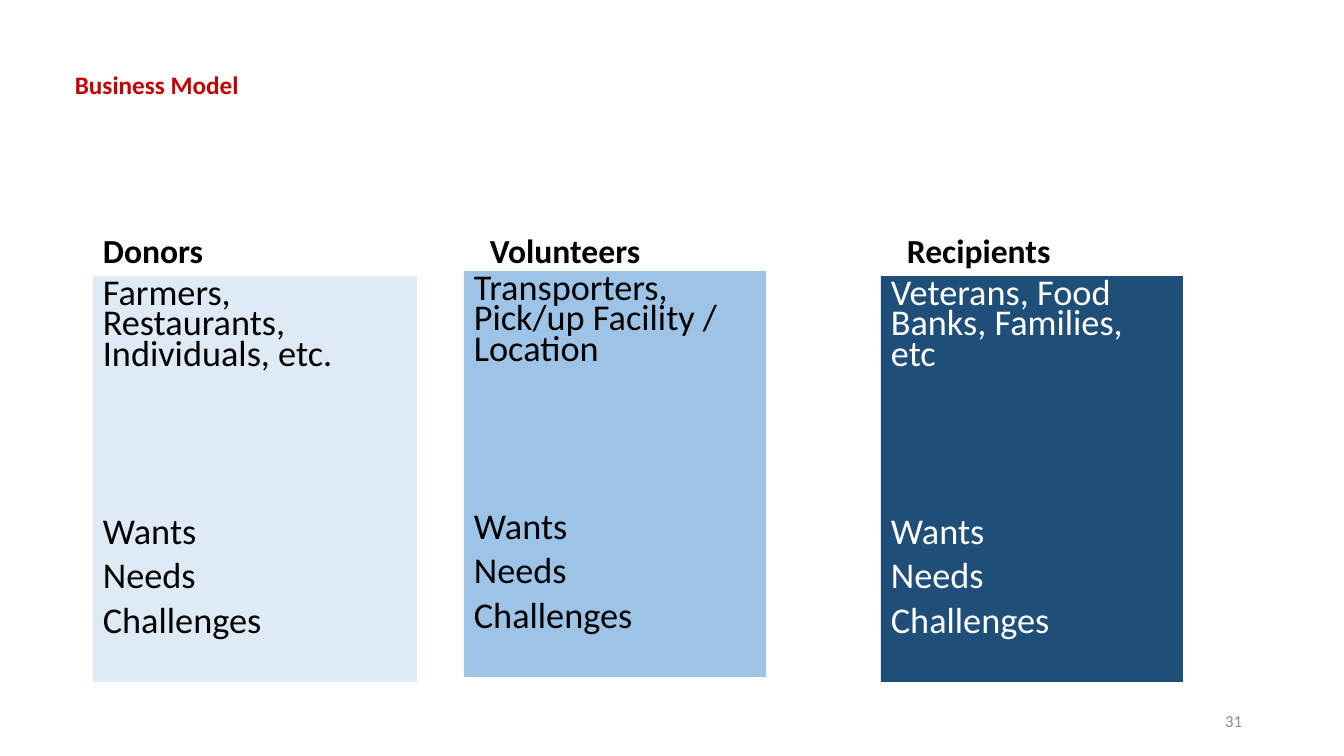
"""Build the Business Model slide with donor, volunteer and recipient columns."""
from pptx import Presentation
from pptx import util as u
from pptx.dml.color import RGBColor
from pptx.enum import shapes, text

PX = 914400 / 100.8
COLORS = {
    "black": "000000", "white": "FFFFFF", "red": "C00000", "gray": "8C8C8C",
    "pale": "DEEBF7", "sky": "9DC3E6", "navy": "1F4E79",
}


def add_text(box, lines, fill=None, size=24, color="black", bold=False,
             anchor=text.MSO_ANCHOR.TOP, align=text.PP_ALIGN.LEFT,
             spacing=1.0, before=0, gap=None):
    sp = s.shapes.add_shape(shapes.MSO_SHAPE.RECTANGLE, *[round(v * PX) for v in box]) \
        if fill else s.shapes.add_textbox(*[round(v * PX) for v in box])
    if fill:
        sp.shadow.inherit = False
        sp.fill.solid()
        sp.fill.fore_color.rgb = RGBColor.from_string(COLORS[fill])
        sp.line.fill.background()
    tf = sp.text_frame
    tf.word_wrap = True
    tf.vertical_anchor = anchor
    for i, line in enumerate(lines):
        p = tf.paragraphs[0] if i == 0 else tf.add_paragraph()
        p.alignment = align
        p.line_spacing = spacing
        p.space_before = u.Pt(gap if gap and i == 1 else before)
        r = p.add_run()
        r.text = line
        r.font.name = "Calibri"
        r.font.size = u.Pt(size)
        r.font.bold = bold
        r.font.color.rgb = RGBColor.from_string(COLORS[color])


prs = Presentation()
prs.slide_width = round(1344 * PX)
prs.slide_height = round(756 * PX)
s = prs.slides.add_slide(prs.slide_layouts[6])

columns = [
    ("Donors", 93, 569, "Farmers, Restaurants, Individuals, etc.",
     93, 276, 324, "pale", "black"),
    ("Volunteers", 480, 286, "Transporters, Pick/up Facility / Location",
     464, 271, 302, "sky", "black"),
    ("Recipients", 897, 286, "Veterans, Food Banks, Families, etc",
     881, 276, 302, "navy", "white"),
]
for head, head_x, head_w, who, x, y, w, fill, color in columns:
    add_text((head_x, 185, head_w, 91), [head], bold=True,
             anchor=text.MSO_ANCHOR.BOTTOM, spacing=0.9, before=10)
    add_text((x, y, w, 406), [who, "Wants", "Needs", "Challenges"], fill=fill,
             size=25.9, color=color, spacing=0.7, before=10, gap=105.5)

add_text((950, 701, 302, 40), ["31"], size=12, color="gray",
         anchor=text.MSO_ANCHOR.MIDDLE, align=text.PP_ALIGN.RIGHT)
add_text((65, 64, 437, 40), ["Business Model"], size=18, color="red", bold=True)

prs.save("out.pptx")
